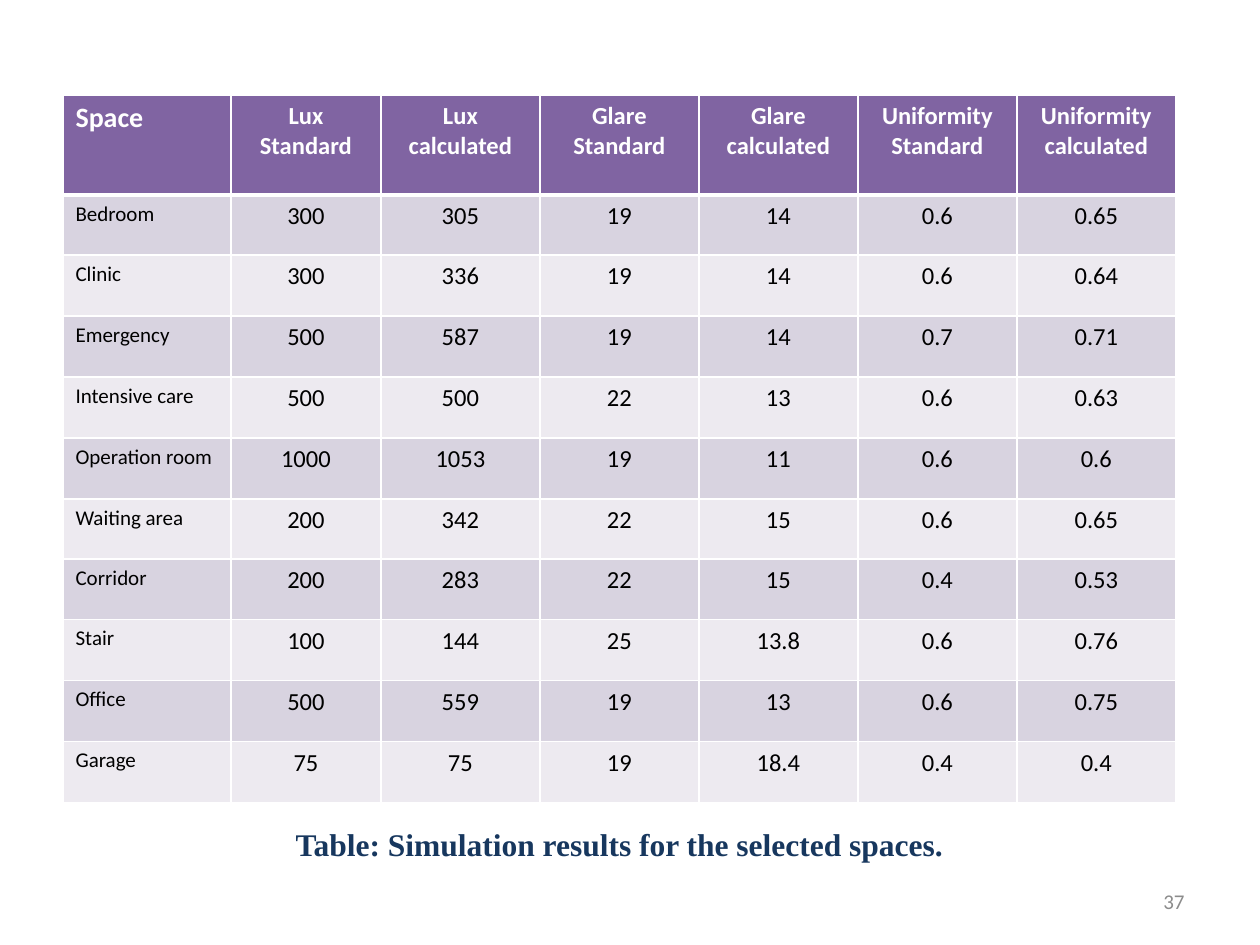
from copy import deepcopy
from dataclasses import dataclass
from itertools import pairwise

from lxml.etree import SubElement
from pptx import Presentation
from pptx.dml.color import RGBColor as Rgb
from pptx.enum.text import MSO_ANCHOR as Anchor, PP_ALIGN as Align
from pptx.oxml.ns import qn
from pptx.util import Pt

PX = 914400 // 126


@dataclass(frozen=True)
class Theme:
    sans: str = "Calibri"
    serif: str = "Times New Roman"
    head: str = "8064A2"
    bands: tuple = ("D8D3E0", "EDEAF0")
    white: str = "FFFFFF"
    black: str = "000000"
    navy: str = "17375E"
    grey: str = "8C8C8C"
    small: int = 12
    body: int = 14
    large: int = 16
    title: int = 18


@dataclass(frozen=True)
class Box:
    left: int
    top: int
    width: int
    height: int

    def emu(self) -> tuple:
        return tuple(n * PX for n in (self.left, self.top, self.width, self.height))


@dataclass(frozen=True)
class Space:
    name: str
    values: str


THEME = Theme()
HEADS = ["Space"] + [f"{item}\n{kind}" for item in ("Lux", "Glare", "Uniformity")
                     for kind in ("Standard", "calculated")]
SPACES = [
    Space("Bedroom", "300 305 19 14 0.6 0.65"),
    Space("Clinic", "300 336 19 14 0.6 0.64"),
    Space("Emergency", "500 587 19 14 0.7 0.71"),
    Space("Intensive care", "500 500 22 13 0.6 0.63"),
    Space("Operation room", "1000 1053 19 11 0.6 0.6"),
    Space("Waiting area", "200 342 22 15 0.6 0.65"),
    Space("Corridor", "200 283 22 15 0.4 0.53"),
    Space("Stair", "100 144 25 13.8 0.6 0.76"),
    Space("Office", "500 559 19 13 0.6 0.75"),
    Space("Garage", "75 75 19 18.4 0.4 0.4"),
]
GRID = Box(63, 95, 1113, 708)
COLS = [168, 150] + [159] * 5
HEAD_H = 100


def write(frame, text: str, *, size: int, color: str, font: str = THEME.sans,
          bold: bool = False, align=Align.LEFT) -> None:
    para = frame.paragraphs[0]
    para.text = text
    para.alignment = align
    for run in para.runs:
        run.font.name = font
        run.font.size = Pt(size)
        run.font.bold = bold
        run.font.color.rgb = Rgb.from_string(color)
    # Line breaks need the run format too, or they grow the line
    for gap in para._p.findall(qn("a:br")):
        gap.append(deepcopy(para.runs[0]._r.rPr))


def label(slide, box: Box, text: str, anchor=Anchor.TOP, **style) -> None:
    frame = slide.shapes.add_textbox(*box.emu()).text_frame
    frame.word_wrap = True
    frame.vertical_anchor = anchor
    write(frame, text, **style)


def edge(cell, **widths: int) -> None:
    """Draw white borders, widths in points, keyed L, R, T, B in that order."""
    props = cell._tc.get_or_add_tcPr()
    for side, width in widths.items():
        line = SubElement(props, qn(f"a:ln{side}"), w=str(Pt(width)))
        fill = SubElement(line, qn("a:solidFill"))
        SubElement(fill, qn("a:srgbClr"), val=THEME.white)


def paint(cell, text: str, fill: str, top: int, base: int, **style) -> None:
    edge(cell, L=1, R=1, T=top, B=base)
    cell.fill.solid()
    cell.fill.fore_color.rgb = Rgb.from_string(fill)
    write(cell.text_frame, text, **style)


def draw_grid(slide) -> None:
    count = len(SPACES)
    table = slide.shapes.add_table(count + 1, len(COLS), *GRID.emu()).table
    for col, width in zip(table.columns, COLS):
        col.width = width * PX
    room = GRID.height - HEAD_H
    stops = [room * i // count for i in range(count + 1)]
    heights = [HEAD_H] + [low - high for high, low in pairwise(stops)]
    for row, height in zip(table.rows, heights):
        row.height = height * PX

    for c, text in enumerate(HEADS):
        paint(table.cell(0, c), text, THEME.head, 1, 3, bold=True, color=THEME.white,
              size=THEME.body if c else THEME.large,
              align=Align.CENTER if c else Align.LEFT)
    for r, space in enumerate(SPACES, 1):
        for c, text in enumerate([space.name, *space.values.split()]):
            paint(table.cell(r, c), text, THEME.bands[(r - 1) % 2],
                  3 if r == 1 else 1, 1, color=THEME.black,
                  size=THEME.body if c else THEME.small,
                  align=Align.CENTER if c else Align.LEFT)


def main() -> None:
    deck = Presentation()
    deck.slide_width, deck.slide_height = 1260 * PX, 945 * PX
    slide = deck.slides.add_slide(deck.slide_layouts[6])
    label(slide, Box(903, 876, 294, 50), "37", Anchor.MIDDLE,
          size=THEME.small, color=THEME.grey, align=Align.RIGHT)
    draw_grid(slide)
    label(slide, Box(84, 819, 1071, 50),
          "Table: Simulation results for the selected spaces.",
          size=THEME.title, color=THEME.navy, font=THEME.serif, bold=True,
          align=Align.CENTER)
    deck.save("out.pptx")


if __name__ == "__main__":
    main()
